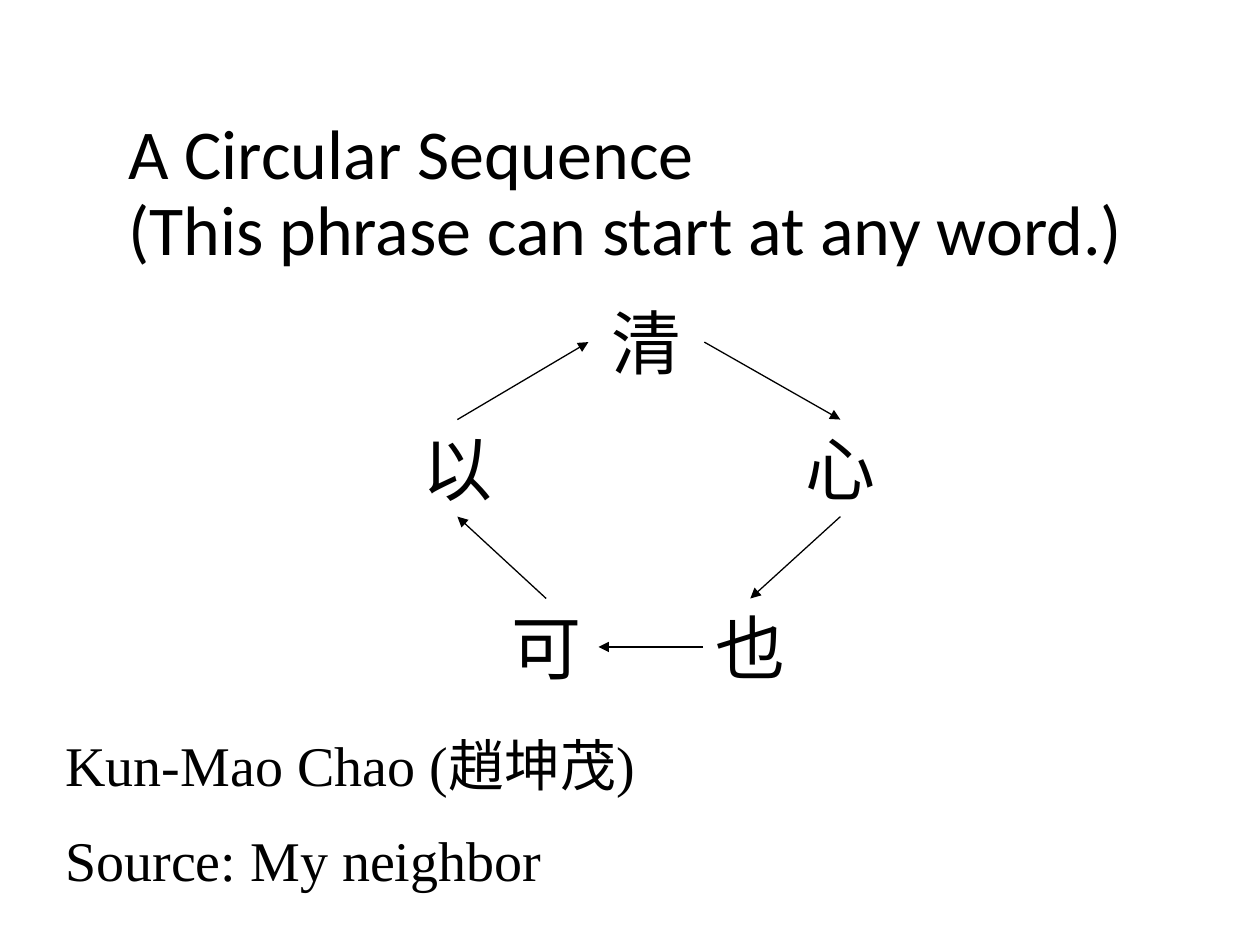
import pptx
import pptx.dml.color
import pptx.enum.shapes
import pptx.enum.text
import pptx.oxml.ns
import pptx.util
from lxml import etree
from pptx.util import Inches

BLACK = "000000"
TOP, LEFT, BOTTOM, RIGHT = range(4)
# (word, left, top, width, side the arrow leaves, side the arrow enters)
WORDS = [
    ("清", 1.5, 0, 0.92, RIGHT, LEFT),
    ("心", 3, 1, 1, BOTTOM, TOP),
    ("也", 2.41, 2.42, 0.75, LEFT, TOP),
    ("可", 0.75, 2.42, 0.83, TOP, RIGHT),
    ("以", 0, 1, 0.92, TOP, BOTTOM),
]


def colour(value):
    """Turn a hex string into a colour."""
    return pptx.dml.color.RGBColor.from_string(value)


def add_text(page, box, text, font, size):
    """Add a wrapped text box whose runs share one font."""
    left, top, width, height = (Inches(length) for length in box)
    shape = page.shapes.add_textbox(left, top, width, height)
    frame = shape.text_frame
    frame.word_wrap = True
    frame.text = text
    for para in frame.paragraphs:
        for span in para.runs:
            span.font.name = font
            span.font.size = pptx.util.Pt(size)
            span.font.color.rgb = colour(BLACK)
    return shape


def add_arrow(page, start, start_side, end, end_side):
    """Join two shapes with a thin arrow."""
    arrow = page.shapes.add_connector(
        pptx.enum.shapes.MSO_CONNECTOR.STRAIGHT, 0, 0, 0, 0)
    arrow.begin_connect(start, start_side)
    arrow.end_connect(end, end_side)
    arrow.line.color.rgb = colour(BLACK)
    arrow.line.width = pptx.util.Pt(0.75)
    qn = pptx.oxml.ns.qn
    etree.SubElement(arrow.line._get_or_add_ln(), qn("a:tailEnd"), type="triangle")
    etree.SubElement(arrow._element.spPr, qn("a:effectLst"))


def add_title(page, box):
    """Add the two-line title."""
    title = add_text(
        page, box, "A Circular Sequence\v(This phrase can start at any word.)",
        "Calibri", 40)
    title.text_frame.vertical_anchor = pptx.enum.text.MSO_ANCHOR.MIDDLE
    title.text_frame.paragraphs[0].line_spacing = 0.9


def add_cycle(page, left, top):
    """Add the ring of words and the arrows between neighbours."""
    shapes = []
    for word, across, down, width, _, _ in WORDS:
        box = (left + across, top + down, width, 0.77)
        shape = add_text(page, box, word, "Arial", 40)
        shape.text_frame.paragraphs[0].alignment = pptx.enum.text.PP_ALIGN.CENTER
        shapes.append(shape)
    for index, start in enumerate(shapes):
        following = (index + 1) % len(shapes)
        add_arrow(page, start, WORDS[index][4], shapes[following], WORDS[following][5])


def add_credit(page, box):
    """Add the author and source lines."""
    credit = add_text(
        page, box, "Kun-Mao Chao (趙坤茂)\nSource: My neighbor",
        "Times New Roman", 32)
    credit.text_frame.paragraphs[1].space_before = pptx.util.Pt(16)


def main():
    """Build and save the deck."""
    deck = pptx.Presentation()
    deck.slide_width, deck.slide_height = Inches(10), Inches(7.5)
    page = deck.slides.add_slide(deck.slide_layouts[6])
    add_title(page, (0.92, 0.92, 9.08, 1.25))
    add_cycle(page, 3.17, 2.33)
    add_credit(page, (0.42, 5.75, 6.42, 1.43))
    deck.save("out.pptx")


if __name__ == "__main__":
    main()
